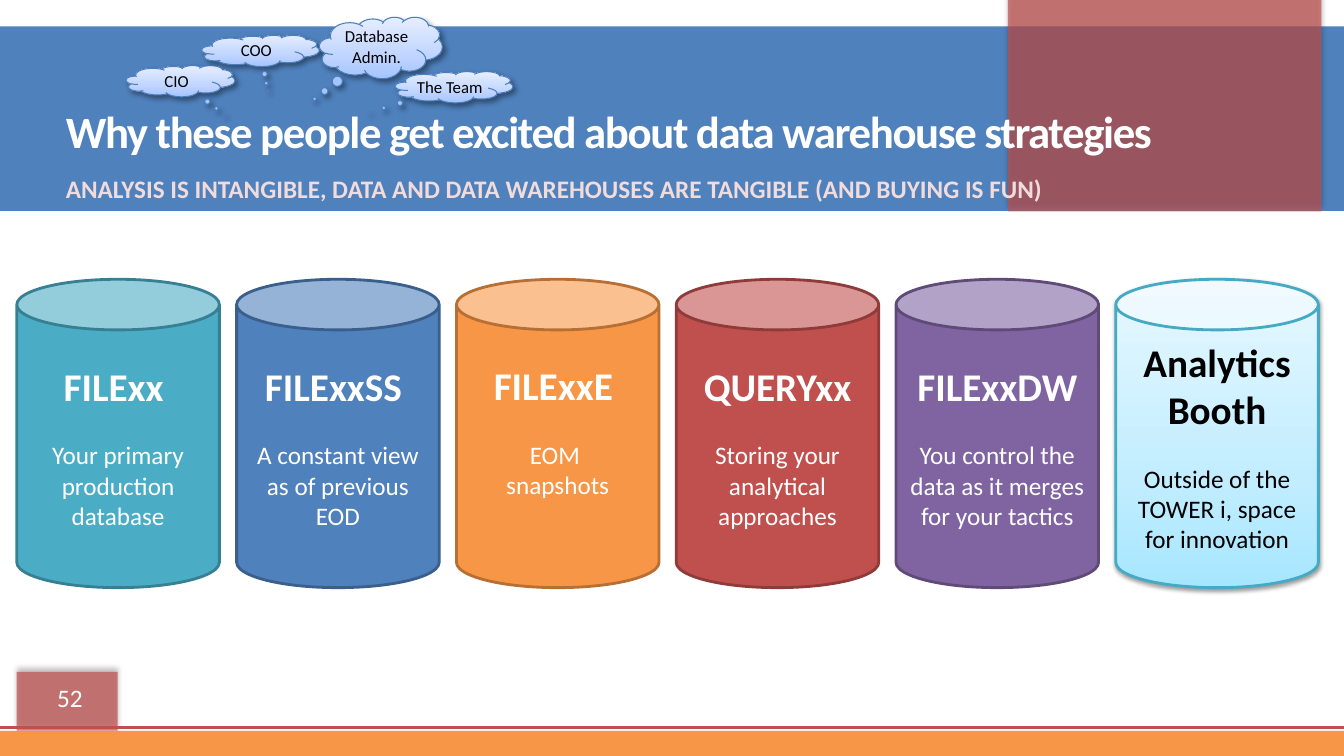
"""Build the slide on why people get excited about data warehouse strategies."""
from dataclasses import dataclass

from lxml.etree import SubElement
from pptx import Presentation
from pptx.dml.color import RGBColor
from pptx.enum.shapes import MSO_CONNECTOR, MSO_SHAPE as SHAPE
from pptx.enum.text import MSO_ANCHOR as ANCHOR, PP_ALIGN as ALIGN
from pptx.oxml.ns import qn
from pptx.util import Pt


@dataclass(frozen=True)
class Theme:
    font: str = "Calibri"
    white: str = "FFFFFF"
    black: str = "000000"
    pink: str = "F2DCDB"
    blue: str = "4F81BD"
    red: str = "C0504D"
    orange: str = "F79646"
    teal: str = "4BACC6"
    purple: str = "8064A2"
    teal_edge: str = "377F92"
    blue_edge: str = "3A5F8C"
    orange_edge: str = "B76F34"
    red_edge: str = "8E3B39"
    purple_edge: str = "5F4A78"
    booth_edge: str = "46AAC5"
    cloud_edge: str = "4B7EBC"
    booth_fade: tuple = ("A7E6FF", "C1EDFF", "E7F8FF")
    cloud_fade: tuple = ("A4C4FF", "BFD4FF", "E6EEFF")
    title_size: int = 32
    heading_size: int = 28
    body_size: int = 18
    thought_size: int = 12


THEME = Theme()
SLIDE_WIDTH, SLIDE_HEIGHT = 960, 540
BLOCK_SHADOW = (35, 4, 3, 270)
BOOTH_SHADOW = (38, 3.1, 1.6, 90)
CLOUD_SHADOW = (40, 4, 3, 45)
FADE_STOPS = (0, 35, 100)
CAN_LEFT, CAN_TOP, CAN_WIDTH, CAN_HEIGHT, CAN_PITCH = 12, 199.5, 144.7, 220.3, 157
BODY_LINE = 22

CANS = (
    ("FILExx ", "Your primary production database", THEME.teal, THEME.teal_edge),
    ("FILExxSS ", "A constant view as of previous EOD", THEME.blue, THEME.blue_edge),
    ("FILExxE ", "EOM \vsnapshots", THEME.orange, THEME.orange_edge),
    ("QUERYxx", "Storing your analytical approaches", THEME.red, THEME.red_edge),
    ("FILExxDW", "You control the data as it merges for your tactics",
     THEME.purple, THEME.purple_edge),
    ("Analytics Booth", "Outside of the TOWER i, space for innovation",
     THEME.booth_fade, THEME.booth_edge),
)

THOUGHTS = (
    ("CIO", (90, 46.8, 77.8, 22.3), (0.4, 1.06)),
    ("COO", (144, 25.2, 84.2, 22.3), (0.06, 1.28)),
    ("Database Admin.", (228.2, 12.2, 87.8, 43.9), (-0.54, 0.83)),
    ("The Team", (282.2, 51.1, 84.2, 22.3), (-0.72, 0.8)),
)


def rgb(code):
    """Turn a hex code into a colour."""
    return RGBColor.from_string(code)


def fade(shape, colours):
    """Fill a shape with a three-stop gradient that runs upwards."""
    shape.fill.gradient()
    shape.fill.gradient_angle = 90
    stops = shape._element.spPr.find(".//" + qn("a:gsLst"))
    for stop in list(stops):
        stops.remove(stop)
    for place, colour in zip(FADE_STOPS, colours):
        stop = SubElement(stops, qn("a:gs"), pos=str(place * 1000))
        SubElement(stop, qn("a:srgbClr"), val=colour)


def cast_shadow(shape, strength, blur, distance, angle):
    """Give a shape a soft outer shadow."""
    effects = shape._element.spPr.find(qn("a:effectLst"))
    shadow = SubElement(effects, qn("a:outerShdw"), blurRad=str(Pt(blur)),
                        dist=str(Pt(distance)), dir=str(angle * 60000), rotWithShape="0")
    colour = SubElement(shadow, qn("a:srgbClr"), val=THEME.black)
    SubElement(colour, qn("a:alpha"), val=str(strength * 1000))


def add_figure(slide, preset, box, fill, edge=None, edge_width=2, shadow=None):
    """Add a preset shape with a plain or faded fill."""
    figure = slide.shapes.add_shape(preset, *map(Pt, box))
    figure.shadow.inherit = False
    if isinstance(fill, tuple):
        fade(figure, fill)
    else:
        figure.fill.solid()
        figure.fill.fore_color.rgb = rgb(fill)
    if edge:
        figure.line.color.rgb = rgb(edge)
        figure.line.width = Pt(edge_width)
    else:
        figure.line.fill.background()
    if shadow:
        cast_shadow(figure, *shadow)
    return figure


def write(paragraph, text, size, colour, bold=False, align=ALIGN.CENTER):
    """Put styled text into a paragraph."""
    paragraph.text = text
    paragraph.alignment = align
    font = paragraph.font
    font.name, font.size, font.bold = THEME.font, Pt(size), bold
    font.color.rgb = rgb(colour)


def add_label(slide, box, text, size, colour, bold=False, align=ALIGN.LEFT,
              anchor=ANCHOR.TOP):
    """Add a one-paragraph text box and return its paragraph."""
    frame = slide.shapes.add_textbox(*map(Pt, box)).text_frame
    frame.word_wrap = True
    frame.vertical_anchor = anchor
    write(frame.paragraphs[0], text, size, colour, bold, align)
    return frame.paragraphs[0]


def add_block(slide, box):
    """Add a translucent red block with a shadow."""
    block = add_figure(slide, SHAPE.RECTANGLE, box, THEME.red, shadow=BLOCK_SHADOW)
    colour = block._element.spPr.find(qn("a:solidFill")).find(qn("a:srgbClr"))
    SubElement(colour, qn("a:alpha"), val="70000")


def add_rule(slide, y):
    """Draw the red rule across the slide."""
    rule = slide.shapes.add_connector(MSO_CONNECTOR.STRAIGHT, 0, Pt(y), Pt(SLIDE_WIDTH), Pt(y))
    rule.line.color.rgb = rgb(THEME.red)
    rule.line.width = Pt(2.25)
    SubElement(rule._element.spPr, qn("a:effectLst"))


def add_can(slide, column, heading, description, fill, edge):
    """Add one data store with its heading and description."""
    is_booth = fill == THEME.booth_fade
    box = (CAN_LEFT + column * CAN_PITCH, CAN_TOP, CAN_WIDTH, CAN_HEIGHT)
    can = add_figure(slide, SHAPE.CAN, box, fill, edge,
                     shadow=BOOTH_SHADOW if is_booth else None)
    colour = THEME.black if is_booth else THEME.white
    frame = can.text_frame
    frame.word_wrap = True
    frame.vertical_anchor = ANCHOR.MIDDLE
    if "\v" in description:
        frame.margin_bottom = Pt(3.6 + BODY_LINE)
    write(frame.paragraphs[0], heading, THEME.heading_size, colour, bold=True)
    details = frame.add_paragraph()
    details.space_before = Pt(BODY_LINE)
    write(details, description, THEME.body_size, colour)


def add_thought(slide, person, box, tail):
    """Add a thought cloud that names a person."""
    cloud = add_figure(slide, SHAPE.CLOUD_CALLOUT, box, THEME.cloud_fade,
                       THEME.cloud_edge, 0.75, CLOUD_SHADOW)
    cloud.adjustments[0], cloud.adjustments[1] = tail
    frame = cloud.text_frame
    frame.word_wrap = True
    frame.vertical_anchor = ANCHOR.MIDDLE
    frame.margin_left = frame.margin_right = frame.margin_top = frame.margin_bottom = 0
    write(frame.paragraphs[0], person, THEME.thought_size, THEME.black)


def main():
    """Build the slide and save it."""
    deck = Presentation()
    deck.slide_width, deck.slide_height = Pt(SLIDE_WIDTH), Pt(SLIDE_HEIGHT)
    slide = deck.slides.add_slide(deck.slide_layouts[6])
    add_figure(slide, SHAPE.RECTANGLE, (0, 522, SLIDE_WIDTH, 18), THEME.orange)
    add_figure(slide, SHAPE.RECTANGLE, (0, 18.8, SLIDE_WIDTH, 131.8), THEME.blue)
    add_block(slide, (720, 0, 224, 151))
    add_block(slide, (12, 480, 72, 42))
    add_rule(slide, 519.8)
    add_label(slide, (40, 120, 864, 30),
              "ANALYSIS IS INTANGIBLE, DATA AND DATA WAREHOUSES ARE TANGIBLE (AND BUYING IS FUN)",
              THEME.body_size, THEME.pink, bold=True)
    title = add_label(slide, (40, 66, 864, 50.4),
                      "Why these people get excited about data warehouse strategies",
                      THEME.title_size, THEME.white, bold=True, anchor=ANCHOR.BOTTOM)
    title.runs[0]._r.get_or_add_rPr().set("spc", "-100")
    add_label(slide, (18, 484, 64, 29), "52", THEME.body_size, THEME.white, align=ALIGN.CENTER)
    for column, can in enumerate(CANS):
        add_can(slide, column, *can)
    for thought in THOUGHTS:
        add_thought(slide, *thought)
    deck.save("out.pptx")


if __name__ == "__main__":
    main()
